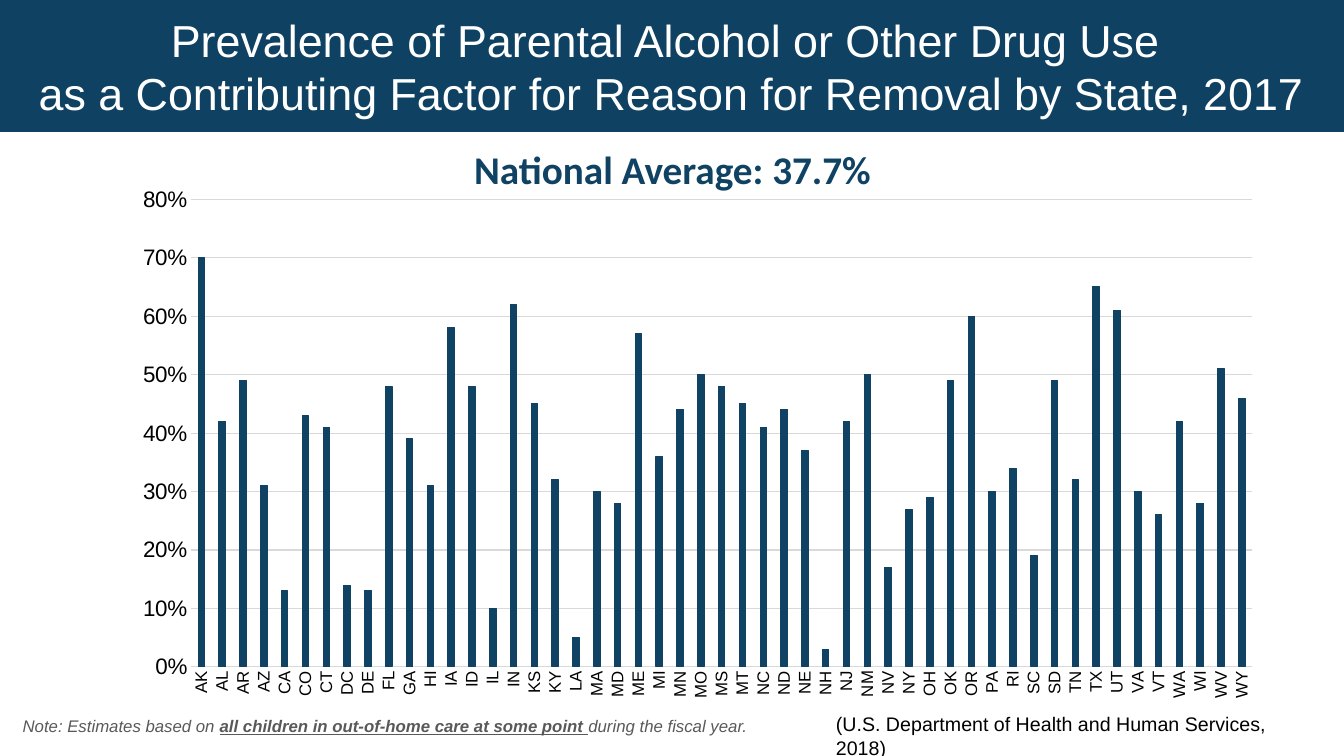
"""Build the slide on parental alcohol or other drug use by state."""
from dataclasses import dataclass

from lxml import etree
from pptx import Presentation
from pptx.chart.axis import CategoryAxis, ValueAxis
from pptx.chart.chart import Chart
from pptx.chart.data import CategoryChartData
from pptx.dml.color import RGBColor
from pptx.enum.chart import XL_CHART_TYPE, XL_TICK_MARK
from pptx.enum.text import MSO_ANCHOR, MSO_AUTO_SIZE, PP_ALIGN
from pptx.oxml.ns import qn
from pptx.slide import Slide
from pptx.text.text import Font, _Paragraph
from pptx.util import Emu, Pt

COLUMNS = XL_CHART_TYPE.COLUMN_CLUSTERED
NO_TICK = XL_TICK_MARK.NONE
TOP, MIDDLE = MSO_ANCHOR.TOP, MSO_ANCHOR.MIDDLE
FIXED = MSO_AUTO_SIZE.NONE
LEFT, CENTER = PP_ALIGN.LEFT, PP_ALIGN.CENTER
PX_PER_INCH = 100.8
COLORS = {"banner": "0F4162", "navy": "0F4263", "white": "FFFFFF",
          "black": "000000", "gray": "595959", "grid": "D9D9D9"}
PLOT_AREA = {"x": 0.042, "y": 0.024, "w": 0.945, "h": 0.91}
TITLE_LINES = ("Prevalence of Parental Alcohol or Other Drug Use ",
               "as a Contributing Factor for Reason for Removal by State, 2017")
STATES = """AK AL AR AZ CA CO CT DC DE FL GA HI IA ID IL IN KS KY LA MA MD ME MI MN MO MS
MT NC ND NE NH NJ NM NV NY OH OK OR PA RI SC SD TN TX UT VA VT WA WI WV WY""".split()
PERCENTAGES = (70, 42, 49, 31, 13, 43, 41, 14, 13, 48, 39, 31, 58, 48, 10, 62, 45,
               32, 5, 30, 28, 57, 36, 44, 50, 48, 45, 41, 44, 37, 3, 42, 50, 17,
               27, 29, 49, 60, 30, 34, 19, 49, 32, 65, 61, 30, 26, 42, 28, 51, 46)


@dataclass(frozen=True)
class Frame:
    """Place and size in px."""
    left: int
    top: int
    width: int
    height: int

    def emu(self) -> tuple[Emu, ...]:
        """Return the four lengths in EMU."""
        return tuple(px(n) for n in (self.left, self.top, self.width, self.height))


@dataclass(frozen=True)
class Style:
    """Look of a run of text."""
    size: int
    color: str
    name: str = "Arial"
    bold: bool = False
    italic: bool = False
    underline: bool = False


@dataclass(frozen=True)
class Span:
    """Text with one style."""
    text: str
    style: Style


@dataclass(frozen=True)
class Label:
    """Text box with one paragraph."""
    frame: Frame
    align: PP_ALIGN
    spans: tuple[Span, ...]


NOTE = Style(12, "gray", italic=True)
STRESSED = Style(12, "gray", bold=True, italic=True, underline=True)
LABELS = (
    Label(Frame(0, 711, 770, 30), CENTER, (
        Span("Note: Estimates based on ", NOTE),
        Span("all children in out-of-home care at some point ", STRESSED),
        Span("during the fiscal year.", NOTE))),
    Label(Frame(459, 140, 427, 57), CENTER, (
        Span("National Average: 37.7%", Style(28, "navy", "Calibri", bold=True)),)),
    Label(Frame(826, 707, 504, 34), LEFT, (
        Span("(U.S. Department of Health and Human Services, 2018)",
             Style(14, "black")),)),
)


def px(count: int) -> Emu:
    """Turn px into EMU."""
    return Emu(round(count * 914400 / PX_PER_INCH))


def color(name: str) -> RGBColor:
    """Look up a named colour."""
    return RGBColor.from_string(COLORS[name])


def style_font(font: Font, style: Style) -> None:
    """Apply a style to a font."""
    font.name, font.size = style.name, Pt(style.size)
    font.bold, font.italic, font.underline = style.bold, style.italic, style.underline
    font.color.rgb = color(style.color)


def add_span(para: _Paragraph, span: Span) -> None:
    """Add one styled run."""
    run = para.add_run()
    run.text = span.text
    style_font(run.font, span.style)


def add_title(page: Slide) -> None:
    """Turn the title placeholder into the banner."""
    banner = page.shapes.title
    banner.left, banner.top, banner.width, banner.height = Frame(0, 0, 1344, 132).emu()
    banner.fill.solid()
    banner.fill.fore_color.rgb = color("banner")
    banner.line.color.rgb = color("banner")
    banner.line.width = Pt(0.75)
    text = banner.text_frame
    text.word_wrap, text.auto_size, text.vertical_anchor = True, FIXED, MIDDLE
    para = text.paragraphs[0]
    para.alignment, para.space_before, para.space_after = CENTER, Pt(0), Pt(6)
    for index, line in enumerate(TITLE_LINES):
        if index:
            para.add_line_break()
        add_span(para, Span(line, Style(32, "white")))


def add_label(page: Slide, label: Label) -> None:
    """Add a text box."""
    text = page.shapes.add_textbox(*label.frame.emu()).text_frame
    text.word_wrap, text.auto_size, text.vertical_anchor = True, FIXED, TOP
    para = text.paragraphs[0]
    para.alignment = label.align
    for span in label.spans:
        add_span(para, span)


def style_axis(axis: CategoryAxis | ValueAxis, size: int) -> None:
    """Set the labels and hide the ticks of an axis."""
    axis.major_tick_mark = axis.minor_tick_mark = NO_TICK
    style_font(axis.tick_labels.font, Style(size, "black"))


def place_plot(chart: Chart) -> None:
    """Fix the inner plot area by fractions of the chart."""
    plot_area = chart.plots[0]._element.getparent()
    for old in plot_area.findall(qn("c:layout")):
        plot_area.remove(old)
    layout = etree.Element(qn("c:layout"))
    plot_area.insert(0, layout)
    manual = etree.SubElement(layout, qn("c:manualLayout"))
    settings = {"layoutTarget": "inner", "xMode": "edge", "yMode": "edge", **PLOT_AREA}
    for tag, value in settings.items():
        etree.SubElement(manual, qn(f"c:{tag}")).set("val", str(value))


def add_state_chart(page: Slide) -> None:
    """Add the column chart of states."""
    data = CategoryChartData(number_format="0%")
    data.categories = STATES
    data.add_series("Series 1", [value / 100 for value in PERCENTAGES])
    frame = Frame(143, 187, 1124, 514)
    chart = page.shapes.add_chart(COLUMNS, *frame.emu(), data).chart
    chart.has_legend = chart.has_title = False
    style_font(chart.font, Style(10, "black"))
    plot = chart.plots[0]
    plot.gap_width, plot.overlap, plot.vary_by_categories = 219, -27, False
    series = plot.series[0]
    series.format.fill.solid()
    series.format.fill.fore_color.rgb = color("navy")
    series.format.line.color.rgb = color("navy")
    series.format.line.width = Pt(0.75)
    states, shares = chart.category_axis, chart.value_axis
    style_axis(states, 12)
    style_axis(shares, 16)
    states._element.find(qn("c:txPr")).find(qn("a:bodyPr")).set("rot", "-5400000")
    shares.minimum_scale, shares.maximum_scale, shares.major_unit = 0, 0.8, 0.1
    shares.tick_labels.number_format = "0%"
    shares.tick_labels.number_format_is_linked = False
    shares.format.line.fill.background()
    shares.has_major_gridlines = True
    for line in (states.format.line, shares.major_gridlines.format.line):
        line.color.rgb = color("grid")
        line.width = Pt(0.75)
    place_plot(chart)


def main() -> None:
    """Build and save the deck."""
    deck = Presentation()
    deck.slide_width, deck.slide_height = px(1344), px(756)
    page = deck.slides.add_slide(deck.slide_layouts.get_by_name("Title Only"))
    add_title(page)
    add_state_chart(page)
    for label in LABELS:
        add_label(page, label)
    deck.save("out.pptx")


if __name__ == "__main__":
    main()
